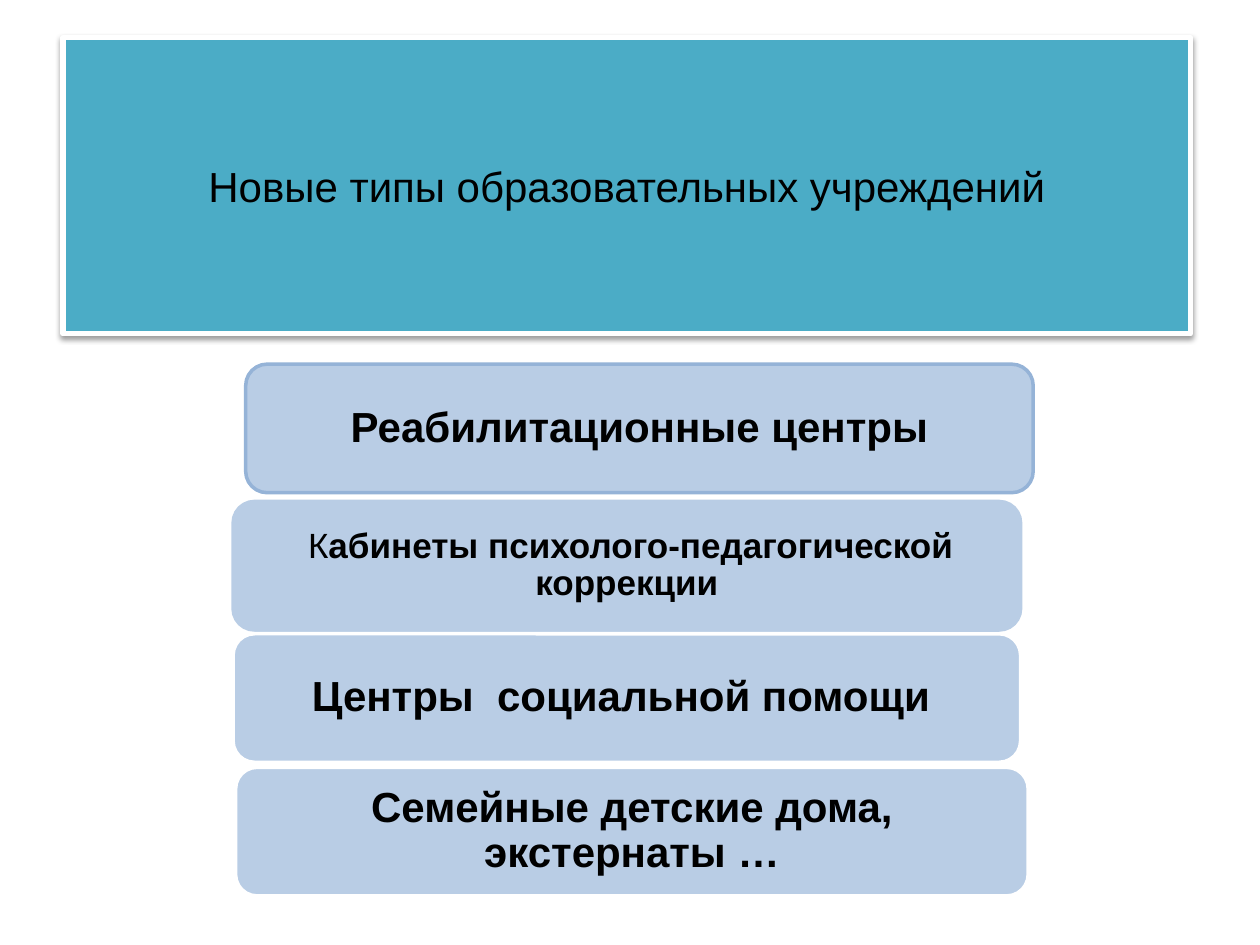
from lxml import etree
from pptx import Presentation
from pptx.dml.color import RGBColor
from pptx.enum.shapes import MSO_SHAPE
from pptx.enum.text import MSO_ANCHOR, PP_ALIGN
from pptx.oxml import parse_xml
from pptx.oxml.ns import nsdecls, qn
from pptx.util import Inches, Pt

ROUNDED = MSO_SHAPE.ROUNDED_RECTANGLE
MIDDLE = MSO_ANCHOR.MIDDLE
CENTER = PP_ALIGN.CENTER

BLACK = RGBColor(0x00, 0x00, 0x00)
WHITE = RGBColor(0xFF, 0xFF, 0xFF)
TEAL = RGBColor(0x4B, 0xAC, 0xC6)
PALE_BLUE = RGBColor(0xB9, 0xCD, 0xE5)
MID_BLUE = RGBColor(0x95, 0xB3, 0xD7)

FONT = "Arial"
TITLE = "Новые типы образовательных учреждений"
CARD_HEIGHT = 1.02

# left, top, width, outline, runs as (text, size, bold)
CARDS = [
    (1.95, 2.89, 6.25, MID_BLUE, [("Реабилитационные центры", 24, True)]),
    (1.85, 3.98, 6.25, PALE_BLUE, [
        (" ", 16, False),
        ("К", 20, False),
        ("абинеты психолого-педагогической коррекции", 20, True),
    ]),
    (1.85, 5.03, 6.25, WHITE, [("Центры  социальной помощи ", 24, True)]),
    (1.87, 6.09, 6.29, WHITE, [("Семейные детские дома, экстернаты …", 24, True)]),
]


def paint(shape, fill, outline, width):
    shape.fill.solid()
    shape.fill.fore_color.rgb = fill
    shape.line.color.rgb = outline
    shape.line.width = Pt(width)


def add_drop_shadow(shape):
    """Put a soft shadow straight below the shape."""
    properties = shape.element.spPr
    for old in properties.findall(qn("a:effectLst")):
        properties.remove(old)
    effects = parse_xml(f"<a:effectLst {nsdecls('a')}/>")
    shadow = etree.SubElement(
        effects, qn("a:outerShdw"), blurRad=str(Pt(3.1)), dist=str(Pt(1.6)),
        dir="5400000", rotWithShape="0")
    color = etree.SubElement(shadow, qn("a:srgbClr"), val="000000")
    etree.SubElement(color, qn("a:alpha"), val="38000")
    properties.append(effects)


def add_title(slide):
    title = slide.shapes.title
    title.left, title.top = Inches(0.5), Inches(0.3)
    title.width, title.height = Inches(8.95), Inches(2.35)
    paint(title, TEAL, WHITE, 3)
    add_drop_shadow(title)
    title.text_frame.text = TITLE
    title.text_frame.vertical_anchor = MIDDLE
    paragraph = title.text_frame.paragraphs[0]
    paragraph.alignment = CENTER
    paragraph.font.name = FONT
    paragraph.font.size = Pt(24)
    paragraph.font.color.rgb = BLACK


def add_card(slide, left, top, width, outline, runs):
    card = slide.shapes.add_shape(
        ROUNDED, Inches(left), Inches(top), Inches(width), Inches(CARD_HEIGHT))
    card.shadow.inherit = False
    paint(card, PALE_BLUE, outline, 2)
    frame = card.text_frame
    frame.word_wrap = True
    frame.vertical_anchor = MIDDLE
    paragraph = frame.paragraphs[0]
    paragraph.alignment = CENTER
    paragraph.line_spacing = 0.9
    paragraph.font.name = FONT
    paragraph.font.color.rgb = BLACK
    for text, size, bold in runs:
        run = paragraph.add_run()
        run.text = text
        run.font.size = Pt(size)
        run.font.bold = bold


def main():
    presentation = Presentation()
    presentation.slide_width = Inches(10)
    presentation.slide_height = Inches(7.5)
    slide = presentation.slides.add_slide(presentation.slide_layouts[5])
    add_title(slide)
    for card in CARDS:
        add_card(slide, *card)
    presentation.save("out.pptx")


if __name__ == "__main__":
    main()
